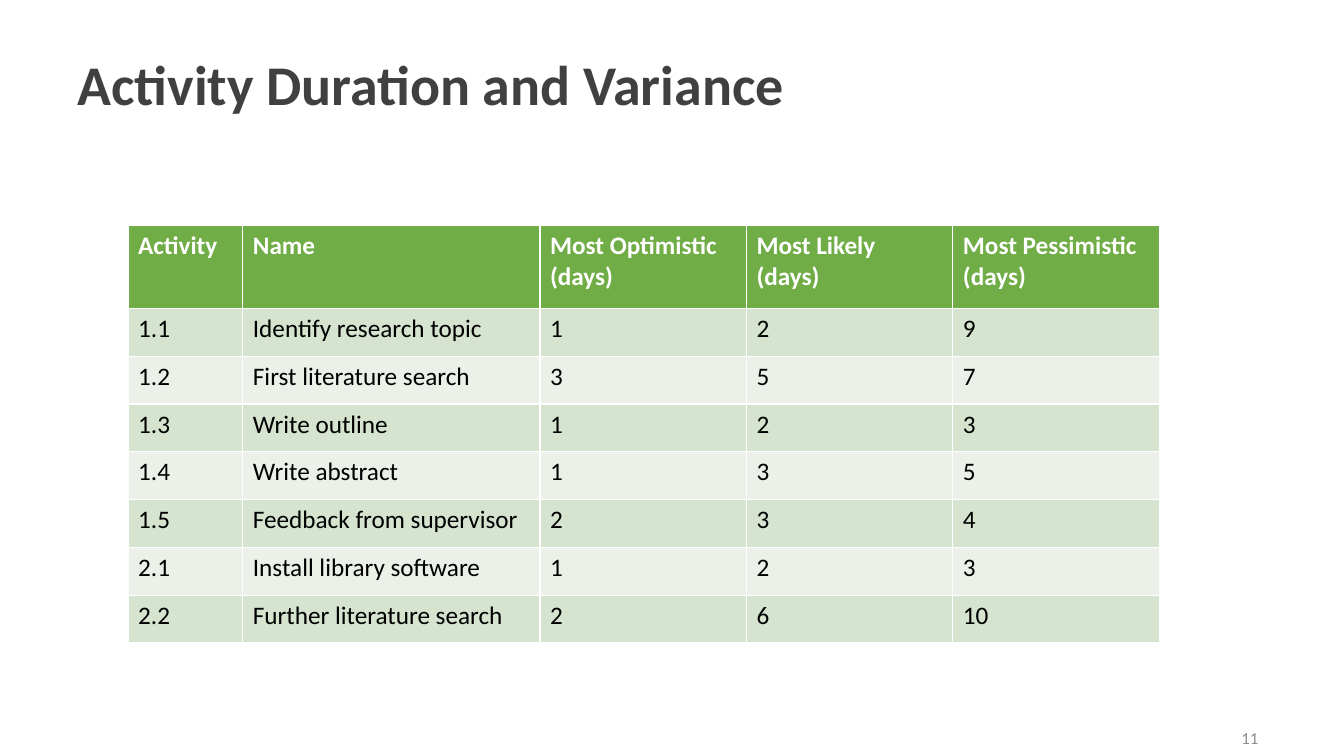
from pptx import Presentation
from pptx.dml.color import RGBColor
from pptx.enum.text import MSO_ANCHOR as Anchor, PP_ALIGN as Align
from pptx.util import Inches, Pt

HEADINGS = ["Activity", "Name", "Most Optimistic (days)",
            "Most Likely (days)", "Most Pessimistic (days)"]
ACTIVITIES = [
    ["1.1", "Identify research topic", "1", "2", "9"],
    ["1.2", "First literature search", "3", "5", "7"],
    ["1.3", "Write outline", "1", "2", "3"],
    ["1.4", "Write abstract", "1", "3", "5"],
    ["1.5", "Feedback from supervisor", "2", "3", "4"],
    ["2.1", "Install library software", "1", "2", "3"],
    ["2.2", "Further literature search", "2", "6", "10"],
]
COLUMN_WIDTHS = [1.14, 2.95, 2.05, 2.05, 2.05]
HEADER_HEIGHT = 0.82
BANDS = ["D5E3CF", "EBF1E9"]


def color(hex_code):
    return RGBColor.from_string(hex_code)


def add_run(paragraph, text, size, hex_code, bold=False):
    run = paragraph.add_run()
    run.text = text
    run.font.name = "Calibri"
    run.font.size = Pt(size)
    run.font.bold = bold
    run.font.color.rgb = color(hex_code)


def place_title(slide, left, top, width, height):
    title = slide.shapes.title
    title.left, title.top = Inches(left), Inches(top)
    title.width, title.height = Inches(width), Inches(height)
    frame = title.text_frame
    frame.vertical_anchor = Anchor.TOP
    frame.margin_top = Inches(0.02)
    heading = frame.paragraphs[0]
    heading.alignment = Align.LEFT
    heading.line_spacing = 0.9
    add_run(heading, "Activity Duration and Variance", 40, "404041", True)


def place_page_number(slide, left, top, width, height):
    page_number = slide.shapes.add_textbox(
        Inches(left), Inches(top), Inches(width), Inches(height))
    frame = page_number.text_frame
    frame.word_wrap = True
    frame.vertical_anchor = Anchor.MIDDLE
    frame.paragraphs[0].alignment = Align.RIGHT
    add_run(frame.paragraphs[0], "11", 12, "8C8C8C")


def place_durations(slide, left, top, width, height):
    rows = [HEADINGS] + ACTIVITIES
    durations = slide.shapes.add_table(
        len(rows), len(HEADINGS), Inches(left), Inches(top),
        Inches(width), Inches(height)).table
    for column, share in zip(durations.columns, COLUMN_WIDTHS):
        column.width = Inches(width * share / sum(COLUMN_WIDTHS))
    activity_height = (height - HEADER_HEIGHT) / len(ACTIVITIES)
    for r, texts in enumerate(rows):
        is_header = r == 0
        durations.rows[r].height = Inches(HEADER_HEIGHT if is_header else activity_height)
        fill = "70AD47" if is_header else BANDS[(r - 1) % 2]
        ink = "FFFFFF" if is_header else "000000"
        for c, text in enumerate(texts):
            cell = durations.cell(r, c)
            cell.fill.solid()
            cell.fill.fore_color.rgb = color(fill)
            add_run(cell.text_frame.paragraphs[0], text, 18, ink, is_header)


def main():
    deck = Presentation()
    deck.slide_width, deck.slide_height = Inches(13.33), Inches(7.5)
    slide = deck.slides.add_slide(deck.slide_layouts[5])
    place_title(slide, 0.67, 0.55, 12.11, 1.25)
    place_page_number(slide, 9.58, 7.12, 3, 0.4)
    place_durations(slide, 1.27, 2.24, 10.23, 4.14)
    deck.save("out.pptx")


if __name__ == "__main__":
    main()
